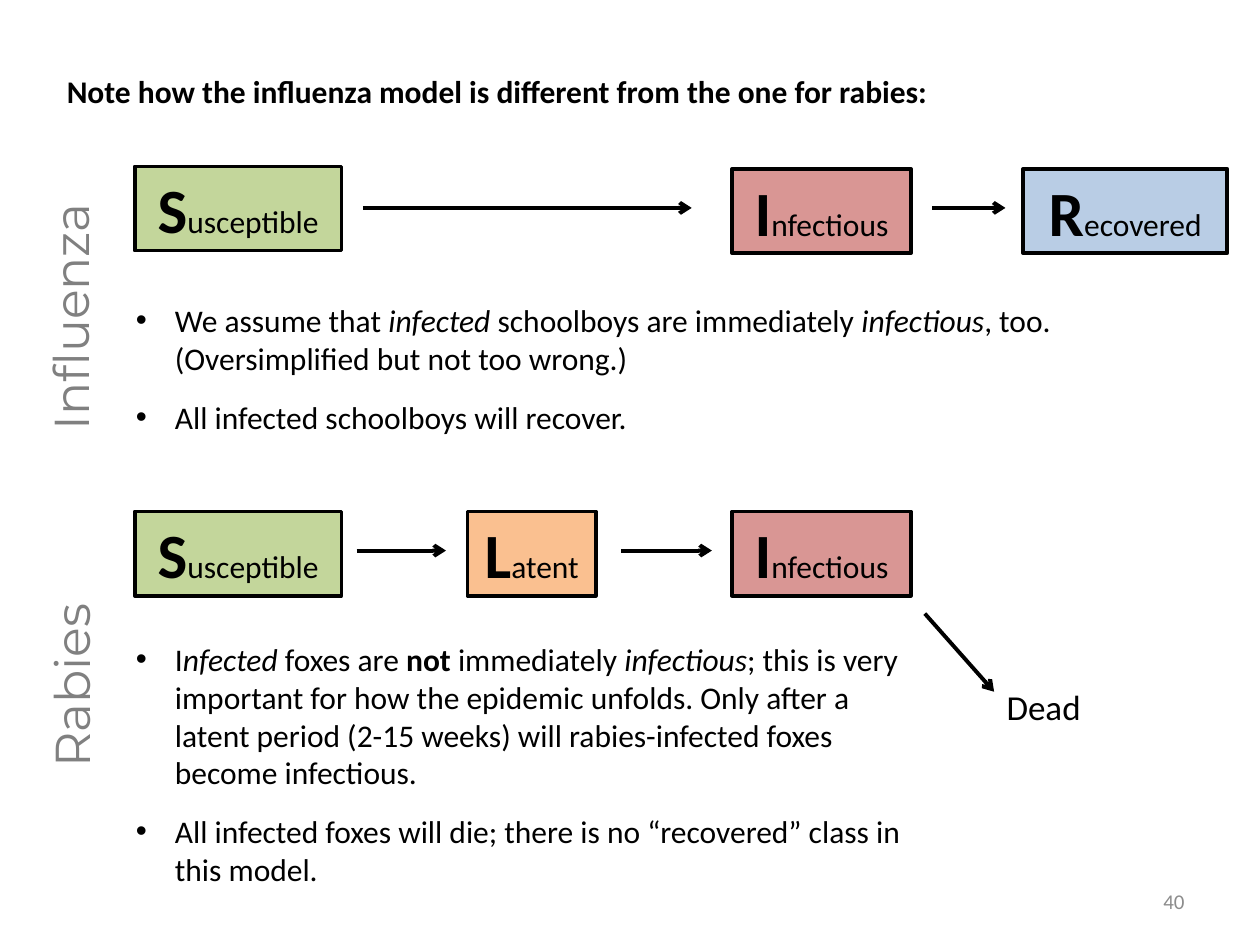
"""Build a slide comparing the influenza and rabies compartment models."""
from dataclasses import dataclass

from lxml import etree
from pptx import Presentation
from pptx.dml.color import RGBColor
from pptx.enum.shapes import MSO_CONNECTOR, MSO_SHAPE
from pptx.enum.text import MSO_ANCHOR, PP_ALIGN
from pptx.oxml.ns import qn
from pptx.shapes.base import BaseShape
from pptx.slide import Slide
from pptx.util import Inches, Pt

RECTANGLE = MSO_SHAPE.RECTANGLE
STRAIGHT = MSO_CONNECTOR.STRAIGHT
TOP, MIDDLE = MSO_ANCHOR.TOP, MSO_ANCHOR.MIDDLE
LEFT, CENTER, RIGHT = PP_ALIGN.LEFT, PP_ALIGN.CENTER, PP_ALIGN.RIGHT

COLORS = {
    "black": "000000",
    "heading": "808080",
    "number": "8C8C8C",
    "susceptible": "C3D69B",
    "latent": "FAC090",
    "infectious": "D99694",
    "recovered": "B9CDE5",
}
BOX_HEIGHT = 0.67
BULLET_INDENT = 0.31


@dataclass(frozen=True)
class Run:
    text: str
    bold: bool = False
    italic: bool = False
    size: float | None = None


@dataclass(frozen=True)
class State:
    name: str
    left: float
    width: float


@dataclass(frozen=True)
class Arrow:
    start: tuple[float, float]
    end: tuple[float, float]


@dataclass(frozen=True)
class Label:
    text: str
    area: tuple[float, float, float, float]


@dataclass(frozen=True)
class Model:
    heading: Label
    states: list[tuple[State, float]]
    arrows: list[Arrow]
    remarks_area: tuple[float, float, float, float]
    remarks: list[list[Run]]


SUSCEPTIBLE = State("Susceptible", 1.07, 1.64)
LATENT = State("Latent", 3.71, 1.02)
INFECTIOUS = State("Infectious", 5.81, 1.42)
RECOVERED = State("Recovered", 8.12, 1.62)

INFLUENZA = Model(
    heading=Label("Influenza", (-0.52, 2.15, 2.16, 0.57)),
    states=[(SUSCEPTIBLE, 1.32), (INFECTIOUS, 1.34), (RECOVERED, 1.34)],
    arrows=[Arrow((2.88, 1.65), (5.49, 1.65)), Arrow((7.4, 1.65), (7.98, 1.65))],
    remarks_area=(0.98, 2.34, 8.35, 1.18),
    remarks=[
        [
            Run("We assume that "),
            Run("infected", italic=True),
            Run(" schoolboys are immediately "),
            Run("infectious", italic=True),
            Run(", too. (Oversimplified but not too wrong.)"),
        ],
        [Run("All infected schoolboys will recover.")],
    ],
)
RABIES = Model(
    heading=Label("Rabies", (-0.27, 5.07, 1.67, 0.57)),
    states=[(SUSCEPTIBLE, 4.06), (LATENT, 4.06), (INFECTIOUS, 4.06)],
    arrows=[
        Arrow((2.83, 4.37), (3.54, 4.37)),
        Arrow((4.93, 4.37), (5.65, 4.37)),
        Arrow((7.34, 4.87), (7.89, 5.49)),
    ],
    remarks_area=(0.98, 5.03, 6.42, 2.09),
    remarks=[
        [
            Run("I"),
            Run("nfected", italic=True),
            Run(" foxes are "),
            Run("not ", bold=True),
            Run("immediately "),
            Run("infectious", italic=True),
            Run("; this is very important for how the epidemic unfolds. Only after a "
                "latent period (2-15 weeks) will rabies-infected foxes become infectious."),
        ],
        [Run("All infected foxes will die; there is no “recovered” class in this model.")],
    ],
)


def write_text(shape: BaseShape, paragraphs: list[list[Run]], *, size: float = 18,
               font: str = "Calibri", color: str = "black", align: PP_ALIGN = LEFT,
               anchor: MSO_ANCHOR = TOP, wrap: bool = True, space_after: float = 0,
               bullets: bool = False) -> None:
    """Fill a shape with formatted paragraphs."""
    frame = shape.text_frame
    frame.word_wrap = wrap
    frame.vertical_anchor = anchor
    for index, runs in enumerate(paragraphs):
        paragraph = frame.add_paragraph() if index else frame.paragraphs[0]
        paragraph.alignment = align
        paragraph.space_after = Pt(space_after)
        if bullets:
            properties = paragraph._p.get_or_add_pPr()
            properties.set("marL", str(Inches(BULLET_INDENT)))
            properties.set("indent", str(-Inches(BULLET_INDENT)))
            etree.SubElement(properties, qn("a:buFont"), typeface="Arial")
            etree.SubElement(properties, qn("a:buChar"), char="•")
        for item in runs:
            run = paragraph.add_run()
            run.text = item.text
            run.font.name = font
            run.font.size = Pt(item.size or size)
            run.font.bold = item.bold
            run.font.italic = item.italic
            run.font.color.rgb = RGBColor.from_string(COLORS[color])


def add_text_box(slide: Slide, area: tuple[float, float, float, float],
                 paragraphs: list[list[Run]], **text_format) -> BaseShape:
    """Add a text box and write its paragraphs."""
    box = slide.shapes.add_textbox(*map(Inches, area))
    write_text(box, paragraphs, **text_format)
    return box


def add_state(slide: Slide, state: State, top: float) -> None:
    """Add a compartment box with an enlarged initial."""
    area = (state.left, top, state.width, BOX_HEIGHT)
    box = slide.shapes.add_shape(RECTANGLE, *map(Inches, area))
    box.shadow.inherit = False
    box.fill.solid()
    box.fill.fore_color.rgb = RGBColor.from_string(COLORS[state.name.lower()])
    box.line.color.rgb = RGBColor.from_string(COLORS["black"])
    box.line.width = Pt(2)
    runs = [Run(state.name[0], bold=True, size=36), Run(state.name[1:])]
    write_text(box, [runs], align=CENTER, anchor=MIDDLE)


def add_arrow(slide: Slide, arrow: Arrow) -> None:
    """Add a straight line with an open arrowhead at its end."""
    connector = slide.shapes.add_connector(STRAIGHT, *map(Inches, arrow.start + arrow.end))
    connector.line.color.rgb = RGBColor.from_string(COLORS["black"])
    connector.line.width = Pt(2.25)
    properties = connector._element.spPr
    etree.SubElement(properties.find(qn("a:ln")), qn("a:tailEnd"), type="arrow")
    etree.SubElement(properties, qn("a:effectLst"))


def add_model(slide: Slide, model: Model) -> None:
    """Add a model's heading, compartments, arrows and remarks."""
    heading = add_text_box(slide, model.heading.area, [[Run(model.heading.text)]],
                           size=28, font="Montserrat", color="heading", wrap=False)
    heading.rotation = 270
    for state, top in model.states:
        add_state(slide, state, top)
    for arrow in model.arrows:
        add_arrow(slide, arrow)
    add_text_box(slide, model.remarks_area, model.remarks, space_after=12, bullets=True)


def main() -> None:
    """Build and save the presentation."""
    presentation = Presentation()
    presentation.slide_width, presentation.slide_height = Inches(10), Inches(7.5)
    slide = presentation.slides.add_slide(presentation.slide_layouts[5])
    title = slide.shapes.title
    title.left, title.top, title.width, title.height = map(Inches, (0.43, 0.52, 7.1, 0.4))
    heading = "Note how the influenza model is different from the one for rabies:"
    write_text(title, [[Run(heading, bold=True)]], wrap=False, space_after=12)
    for model in (INFLUENZA, RABIES):
        add_model(slide, model)
    add_text_box(slide, (7.89, 5.39, 1.04, 0.44), [[Run("Dead")]], size=20)
    add_text_box(slide, (7.17, 6.95, 2.33, 0.4), [[Run("40")]], size=12,
                 color="number", align=RIGHT, anchor=MIDDLE)
    presentation.save("out.pptx")


if __name__ == "__main__":
    main()
